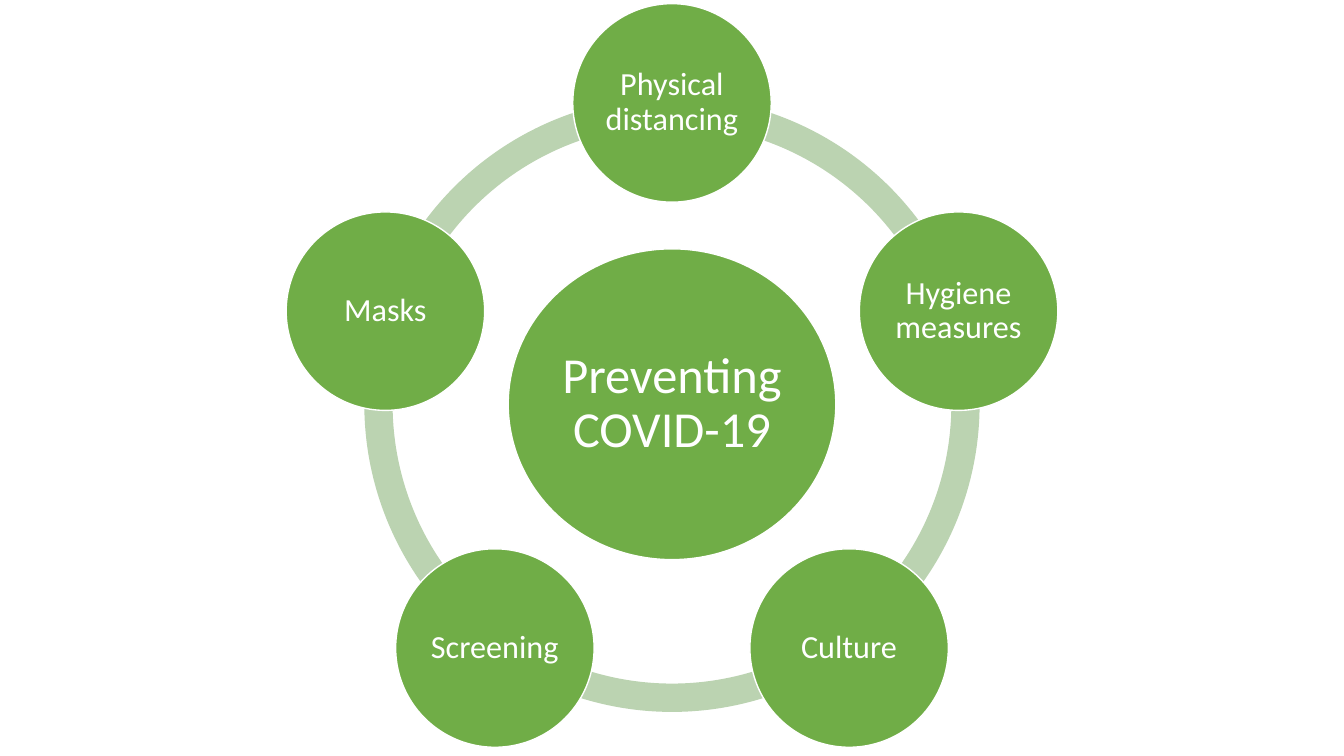
from math import cos, radians, sin

from pptx import Presentation
from pptx.dml.color import RGBColor
from pptx.enum.shapes import MSO_SHAPE
from pptx.enum.text import MSO_ANCHOR, PP_ALIGN
from pptx.util import Emu, Pt

PX = 9525  # EMU per px, 96 px to the inch
CENTER_X, CENTER_Y = 640, 385
RING_SIZE, ORBIT_RADIUS, NODE_SIZE = 586, 287, 189
RING_THICKNESS = 0.046  # share of the ring's size
ADJ_PER_DEGREE = 0.6  # 60000 angle units, stored in 100000ths
GREEN, PALE_GREEN, WHITE = "70AD47", "BBD3B1", "FFFFFF"
MEASURES = ["Physical distancing", "Hygiene measures", "Culture",
            "Screening", "Masks"]


def px(n):
    return Emu(round(n * PX))


def color(hex_value):
    return RGBColor.from_string(hex_value)


def add_centered(s, kind, cx, cy, w, h, fill):
    """Add a filled shape whose middle is at cx, cy."""
    sp = s.shapes.add_shape(kind, px(cx - w / 2), px(cy - h / 2), px(w), px(h))
    sp.shadow.inherit = False
    sp.fill.solid()
    sp.fill.fore_color.rgb = color(fill)
    return sp


def add_ring_arc(s, start, end):
    sp = add_centered(s, MSO_SHAPE.BLOCK_ARC, CENTER_X, CENTER_Y,
                      RING_SIZE, RING_SIZE, PALE_GREEN)
    sp.line.fill.background()
    sp.adjustments[0] = start % 360 * ADJ_PER_DEGREE
    sp.adjustments[1] = end % 360 * ADJ_PER_DEGREE
    sp.adjustments[2] = RING_THICKNESS


def add_bubble(s, text, cx, cy, w, h, size, inset):
    sp = add_centered(s, MSO_SHAPE.OVAL, cx, cy, w, h, GREEN)
    sp.line.color.rgb = color(WHITE)
    sp.line.width = Pt(1)
    tf = sp.text_frame
    frame_format = {"word_wrap": True, "vertical_anchor": MSO_ANCHOR.MIDDLE}
    for side in ("left", "top", "right", "bottom"):
        frame_format[f"margin_{side}"] = px(inset)
    for name, value in frame_format.items():
        setattr(tf, name, value)
    p = tf.paragraphs[0]
    p.alignment = PP_ALIGN.CENTER
    p.line_spacing = 0.9
    r = p.add_run()
    r.text = text
    r.font.name = "Calibri"
    r.font.size = Pt(size)
    r.font.color.rgb = color(WHITE)


def main():
    prs = Presentation()
    prs.slide_width, prs.slide_height = px(1280), px(720)
    s = prs.slides.add_slide(prs.slide_layouts[6])

    step = 360 / len(MEASURES)
    angles = [-90 + i * step for i in range(len(MEASURES))]
    for angle in reversed(angles):
        add_ring_arc(s, angle, angle + step)

    add_bubble(s, "Preventing COVID-19", CENTER_X, CENTER_Y, 312, 296, 36, 5)
    for measure, angle in zip(MEASURES, angles):
        add_bubble(s, measure,
                   CENTER_X + ORBIT_RADIUS * cos(radians(angle)),
                   CENTER_Y + ORBIT_RADIUS * sin(radians(angle)),
                   NODE_SIZE, NODE_SIZE, 23, 3)

    prs.save("out.pptx")


if __name__ == "__main__":
    main()
